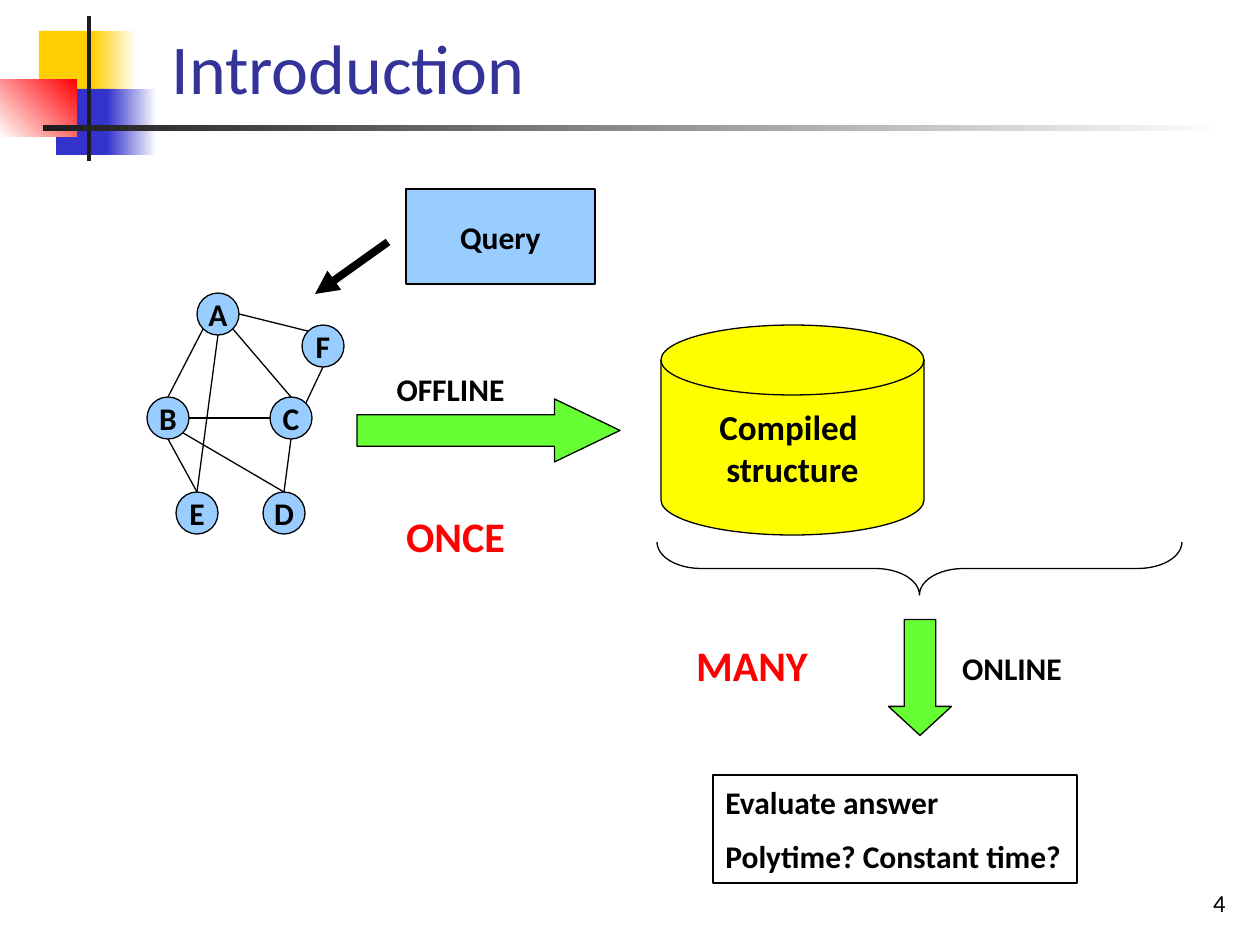
"""Build the Introduction slide: a query graph compiled offline and evaluated online."""
from math import cos, radians, sin

from lxml.etree import SubElement
from pptx import Presentation
from pptx.dml.color import RGBColor
from pptx.enum.shapes import MSO_CONNECTOR, MSO_SHAPE as Preset
from pptx.enum.text import MSO_ANCHOR as Anchor, PP_ALIGN as Align
from pptx.oxml.ns import qn
from pptx.util import Pt

PX = 914400 / 126
FONT = "Calibri"
BLACK, WHITE, RED = "000000", "FFFFFF", "FF0000"
GOLD, BLUE, CHARCOAL = "FFCF01", "3333CC", "1C1C1C"
SKY, GREEN, YELLOW = "99CCFF", "66FF33", "FFFF00"

TITLE = ("Introduction", (159, 29, 1074, 86))

# (box, start colour, end colour, gradient angle)
DECORATION = [
    ((39, 31, 60, 66), GOLD, None, 0),
    ((92, 31, 45, 66), GOLD, WHITE, 0),
    ((56, 89, 58, 66), BLUE, None, 0),
    ((107, 89, 50, 66), BLUE, WHITE, 0),
    ((-1, 79, 78, 58), WHITE, RED, 45),
    ((87, 16, 4, 145), CHARCOAL, None, 0),
    ((43, 125, 1186, 6), CHARCOAL, WHITE, 0),
]

NODE = 42
NODES = {"A": (197, 293), "F": (302, 325), "B": (147, 397),
         "C": (270, 397), "E": (176, 492), "D": (263, 492)}
COMPASS = {"E": 0, "NE": 45, "N": 90, "NW": 135, "W": 180, "SW": 225, "S": 270, "SE": 315}
EDGES = [
    ("A", "SW", "B", "N"), ("A", "SE", "C", "N"), ("A", "S", "E", "N"),
    ("F", "NW", "A", "E"), ("F", "S", "C", "NE"), ("B", "E", "C", "W"),
    ("B", "SE", "D", "N"), ("B", "S", "E", "N"), ("C", "S", "D", "N"),
]

# (preset, box, fill, rotation, adjustments, lines, text format)
BLOCKS = [
    (Preset.FLOWCHART_MAGNETIC_DISK, (661, 325, 263, 210), YELLOW, 0, (),
     ["Compiled ", "structure"], dict(size=20)),
    (Preset.RIGHT_ARROW, (357, 399, 263, 63), GREEN, 0, (0.5, 1.04), [], {}),
    (Preset.LEFT_BRACE, (893, 306, 53, 525), None, 270, (0.83, 0.5), [], {}),
    (Preset.RIGHT_ARROW, (862, 646, 116, 63), GREEN, 90, (0.5, 0.46), [], {}),
    (Preset.RECTANGLE, (713, 775, 364, 108), None, 0, (),
     ["Evaluate answer", "Polytime? Constant time?"], dict(align=Align.LEFT, before=9)),
    (Preset.RECTANGLE, (406, 189, 189, 95), SKY, 0, (), ["Query"], dict(before=9)),
]

# (text, box, text format)
LABELS = [
    ("OFFLINE", (383, 364, 135, 50), {}),
    ("ONLINE", (949, 643, 126, 50), {}),
    ("ONCE", (393, 504, 125, 63), dict(size=24, color=RED)),
    ("MANY", (683, 633, 138, 63), dict(size=24, color=RED)),
    ("4", (976, 861, 262, 63),
     dict(size=14, bold=False, align=Align.RIGHT, anchor=Anchor.BOTTOM, wrap=True)),
]

QUERY_ARROW = ((388, 242), (315, 294))


def emu(lengths):
    return [round(length * PX) for length in lengths]


def rgb(code):
    return RGBColor.from_string(code)


def write(frame, lines, size=18, color=BLACK, bold=True, align=Align.CENTER,
          anchor=Anchor.MIDDLE, wrap=False, before=0):
    frame.word_wrap, frame.vertical_anchor = wrap, anchor
    for number, line in enumerate(lines):
        paragraph = frame.add_paragraph() if number else frame.paragraphs[0]
        paragraph.alignment, paragraph.space_before = align, Pt(before)
        run = paragraph.add_run()
        run.text = line
        run.font.name, run.font.size, run.font.bold = FONT, Pt(size), bold
        run.font.color.rgb = rgb(color)


def add_block(slide, preset, box, fill, outlined=True):
    block = slide.shapes.add_shape(preset, *emu(box))
    block.shadow.inherit = False
    if fill:
        block.fill.solid()
        block.fill.fore_color.rgb = rgb(fill)
    else:
        block.fill.background()
    if outlined:
        block.line.color.rgb, block.line.width = rgb(BLACK), Pt(0.75)
    else:
        block.line.fill.background()
    return block


def add_line(slide, start, end, width=0.75, arrow=False):
    line = slide.shapes.add_connector(MSO_CONNECTOR.STRAIGHT, *emu(start + end))
    line.line.color.rgb, line.line.width = rgb(BLACK), Pt(width)
    if arrow:
        SubElement(line.line._get_or_add_ln(), qn("a:tailEnd"), type="triangle")
    SubElement(line._element.spPr, qn("a:effectLst"))


def rim(node, direction):
    left, top = NODES[node]
    angle, radius = radians(COMPASS[direction]), NODE / 2
    return left + radius * (1 + cos(angle)), top + radius * (1 - sin(angle))


def add_decoration(slide):
    for box, start, end, angle in DECORATION:
        bar = add_block(slide, Preset.RECTANGLE, box, start, outlined=False)
        if end:
            bar.fill.gradient()
            bar.fill.gradient_angle = angle
            for stop, code in zip(bar.fill.gradient_stops, (start, end)):
                stop.color.rgb = rgb(code)


def add_graph(slide):
    for name, corner in NODES.items():
        node = add_block(slide, Preset.OVAL, corner + (NODE, NODE), SKY)
        write(node.text_frame, [name])
    for source, leaving, target, entering in EDGES:
        add_line(slide, rim(source, leaving), rim(target, entering))


def main():
    prs = Presentation()
    prs.slide_width, prs.slide_height = emu((1260, 945))
    slide = prs.slides.add_slide(prs.slide_layouts[5])

    add_decoration(slide)
    heading, box = TITLE
    title = slide.shapes.title
    title.left, title.top, title.width, title.height = emu(box)
    write(title.text_frame, [heading], size=40, color="333399", bold=False,
          align=Align.LEFT, anchor=Anchor.BOTTOM, wrap=True)

    add_graph(slide)
    for preset, box, fill, rotation, adjustments, lines, style in BLOCKS:
        block = add_block(slide, preset, box, fill)
        block.rotation = rotation
        for index, value in enumerate(adjustments):
            block.adjustments[index] = value
        write(block.text_frame, lines, **style)
    for text, box, style in LABELS:
        label = slide.shapes.add_textbox(*emu(box))
        write(label.text_frame, [text], **{"anchor": Anchor.TOP, **style})
    add_line(slide, *QUERY_ARROW, width=4.5, arrow=True)

    prs.save("out.pptx")


if __name__ == "__main__":
    main()
